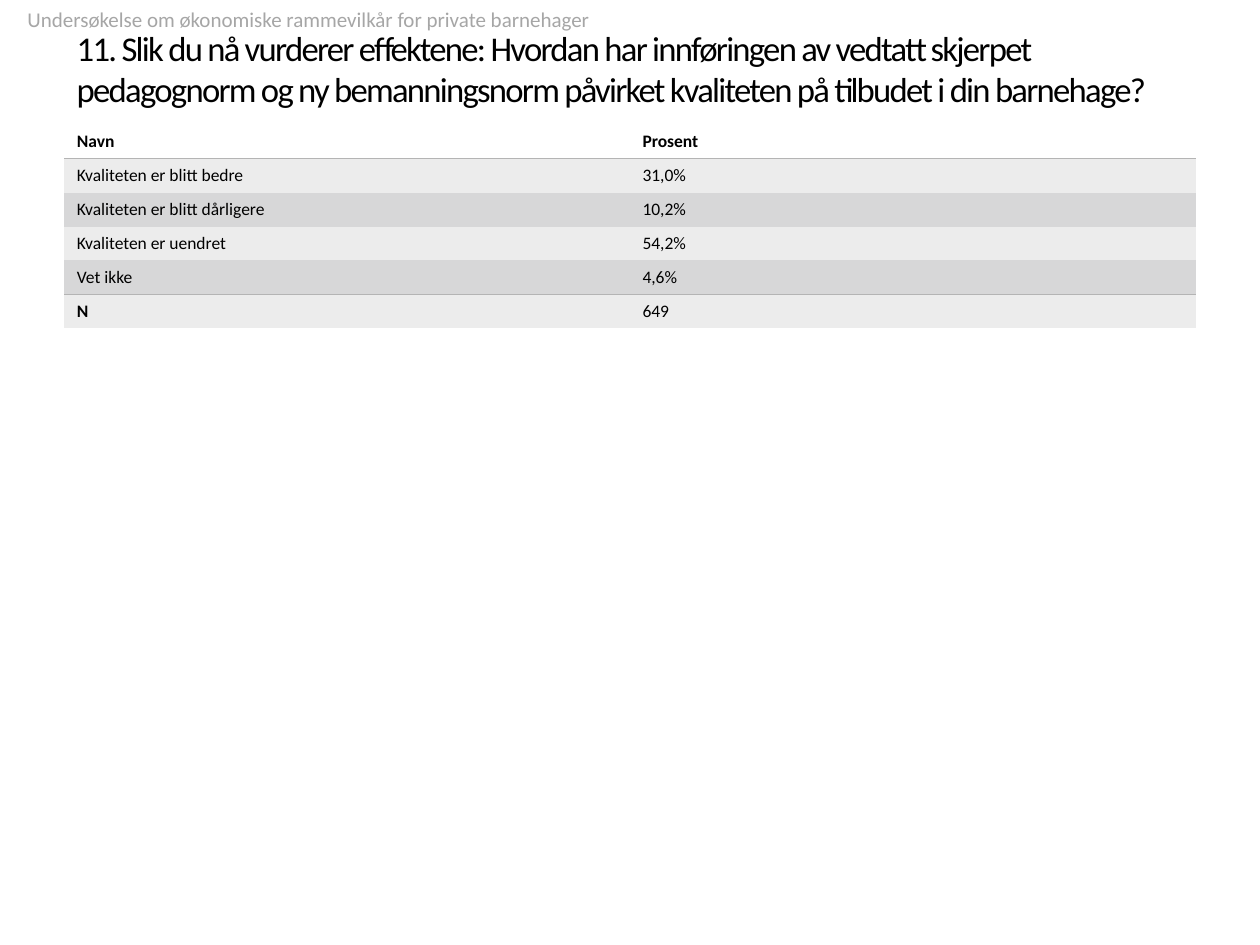
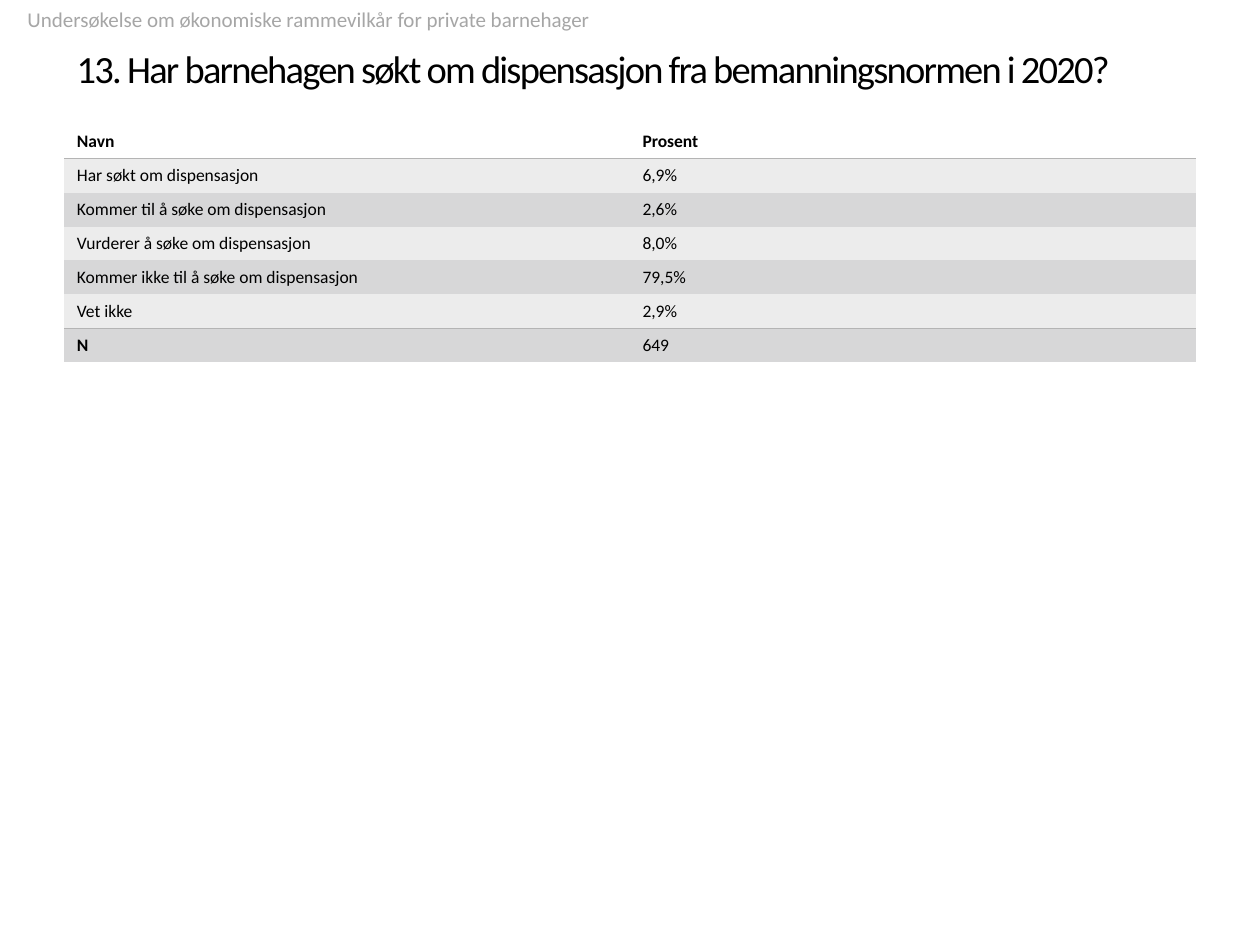
from dataclasses import dataclass

from lxml import etree
from pptx import Presentation
from pptx.dml.color import RGBColor
from pptx.enum.text import MSO_ANCHOR
from pptx.oxml.ns import qn
from pptx.util import Pt

MIDDLE = MSO_ANCHOR.MIDDLE
TOP = MSO_ANCHOR.TOP


@dataclass(frozen=True)
class Theme:
    font: str = "Calibri"
    ink: str = "000000"
    faint: str = "A6A6A6"
    rule: str = "B4B4B4"
    head: str = "FFFFFF"
    bands: tuple = ("ECECEC", "D7D7D8")
    strap: float = 12
    cell: float = 10
    row: float = 19.4


THEME = Theme()

# Regions: left, top, width, height
STRAP = (0, 0, 720, 18)
TITLE = (36.8, 17.3, 648, 43.2)
TABLE = (36.8, 71.3, 646.4)

SURVEY = "Undersøkelse om økonomiske rammevilkår for private barnehager"
HEADS = ("Navn", "Prosent")
PAGES = [
    ("11. Slik du nå vurderer effektene: Hvordan har innføringen av vedtatt "
     "skjerpet pedagognorm og ny bemanningsnorm påvirket kvaliteten på "
     "tilbudet i din barnehage?", 19.8,
     [("Kvaliteten er blitt bedre", "31,0%"),
      ("Kvaliteten er blitt dårligere", "10,2%"),
      ("Kvaliteten er uendret", "54,2%"),
      ("Vet ikke", "4,6%"),
      ("N", "649")]),
    ("13. Har barnehagen søkt om dispensasjon fra bemanningsnormen i 2020?", 22,
     [("Har søkt om dispensasjon", "6,9%"),
      ("Kommer til å søke om dispensasjon", "2,6%"),
      ("Vurderer å søke om dispensasjon", "8,0%"),
      ("Kommer ikke til å søke om dispensasjon", "79,5%"),
      ("Vet ikke", "2,9%"),
      ("N", "649")]),
]


def style(para, size, color, bold=False):
    for run in para.runs:
        font = run.font
        font.name, font.size, font.bold = THEME.font, Pt(size), bold
        font.color.rgb = RGBColor.from_string(color)


def add_text(slide, box, text, size, color, anchor):
    frame = slide.shapes.add_textbox(*map(Pt, box)).text_frame
    frame.word_wrap = True
    frame.vertical_anchor = anchor
    frame.text = text
    para = frame.paragraphs[0]
    style(para, size, color)
    return para


def add_strap(slide, box):
    para = add_text(slide, box, SURVEY, THEME.strap, THEME.faint, TOP)
    para._p.get_or_add_pPr().set("marL", str(Pt(8.64)))


def add_title(slide, box, text, size):
    para = add_text(slide, box, text, size, THEME.ink, MIDDLE)
    para.runs[0].font._element.set("spc", "-100")


def set_edges(cell, ruled):
    """Draw a grey line on the ruled sides and none on the others."""
    props = cell._tc.get_or_add_tcPr()
    for side in "LRTB":
        line = etree.SubElement(props, qn(f"a:ln{side}"), w=str(Pt(1)))
        if side in ruled:
            fill = etree.SubElement(line, qn("a:solidFill"))
            etree.SubElement(fill, qn("a:srgbClr"), val=THEME.rule)
        else:
            etree.SubElement(line, qn("a:noFill"))


def add_grid(slide, box, rows):
    left, top, width = box
    lines = [HEADS, *rows]
    last = len(lines) - 1
    height = THEME.row * len(lines)
    table = slide.shapes.add_table(len(lines), len(HEADS), Pt(left), Pt(top),
                                   Pt(width), Pt(height)).table
    for r, line in enumerate(lines):
        table.rows[r].height = Pt(THEME.row)
        # Rules lie under the heads and above the total
        ruled = ("T" if r in (1, last) else "") + ("B" if r in (0, last - 1) else "")
        shade = THEME.bands[(r - 1) % 2] if r else THEME.head
        for c, text in enumerate(line):
            cell = table.cell(r, c)
            set_edges(cell, ruled)
            cell.fill.solid()
            cell.fill.fore_color.rgb = RGBColor.from_string(shade)
            cell.text_frame.text = text
            bold = r == 0 or (r == last and c == 0)
            style(cell.text_frame.paragraphs[0], THEME.cell, THEME.ink, bold)


def add_page(deck, title, size, rows):
    slide = deck.slides.add_slide(deck.slide_layouts[6])
    add_title(slide, TITLE, title, size)
    add_strap(slide, STRAP)
    add_grid(slide, TABLE, rows)


def main():
    deck = Presentation()
    deck.slide_width, deck.slide_height = Pt(720), Pt(540)
    for page in PAGES:
        add_page(deck, *page)
    deck.save("out.pptx")


if __name__ == "__main__":
    main()
